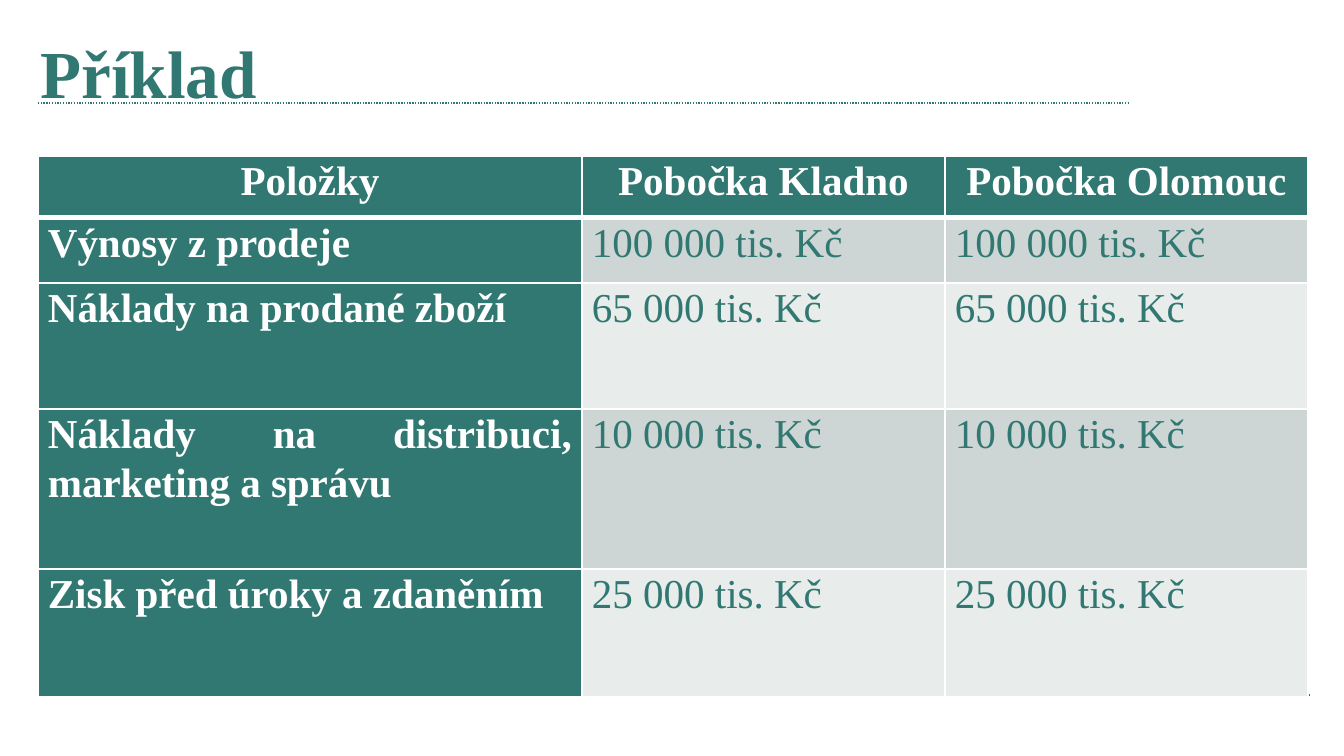
from lxml.etree import SubElement
from pptx import Presentation
from pptx.dml.color import RGBColor
from pptx.enum.dml import MSO_LINE_DASH_STYLE as Dash
from pptx.enum.shapes import MSO_CONNECTOR as Conn
from pptx.enum.text import MSO_ANCHOR as Anchor, PP_ALIGN as Align
from pptx.oxml.ns import qn
from pptx.util import Pt

FONT = "Times New Roman"
TEAL, WHITE, BANDS = "307871", "FFFFFF", ("CDD6D5", "E8ECEB")
COLS = (544, 363, 363)
ROWS = (62, 65, 126, 160, 128)
HEADERS = ("Položky", "Pobočka Kladno", "Pobočka Olomouc")
ITEMS = (
    ("Výnosy z prodeje", "100 000 tis. Kč"),
    ("Náklady na prodané zboží", "65 000 tis. Kč"),
    ("Náklady na distribuci, marketing a správu", "10 000 tis. Kč"),
    ("Zisk před úroky a zdaněním", "25 000 tis. Kč"),
)


def px(n):
    """Turn pixels into EMU."""
    return round(n * 914400 / 134.4)


def color(hex_code):
    """Turn a hex string into a colour."""
    return RGBColor.from_string(hex_code)


def style(p, size, hex_code, bold, align):
    """Format a whole paragraph."""
    p.alignment = align
    p.font.name, p.font.size, p.font.bold = FONT, Pt(size), bold
    p.font.color.rgb = color(hex_code)


def add_rule(s, x, y, w):
    """Draw a dotted horizontal rule."""
    line = s.shapes.add_connector(Conn.STRAIGHT, px(x), px(y), px(x + w), px(y))
    line.line.color.rgb = color(TEAL)
    line.line.width = Pt(0.75)
    line.line.dash_style = Dash.ROUND_DOT
    SubElement(line._element.spPr, qn("a:effectLst"))


def add_title(s, x, y, w, h, text):
    """Place the slide title."""
    sp = s.shapes.title
    sp.left, sp.top, sp.width, sp.height = px(x), px(y), px(w), px(h)
    tf = sp.text_frame
    tf.text = text
    tf.vertical_anchor = Anchor.MIDDLE
    style(tf.paragraphs[0], 36, TEAL, True, Align.LEFT)


def add_borders(cell, **widths):
    """Give a cell white borders of the given point widths."""
    tcPr = cell._tc.get_or_add_tcPr()
    for side in "LRTB":
        ln = SubElement(tcPr, qn(f"a:ln{side}"), w=str(Pt(widths.get(side, 1))))
        SubElement(SubElement(ln, qn("a:solidFill")), qn("a:srgbClr"), val=WHITE)


def fill_cell(cell, text, row, col):
    """Write and format one table cell."""
    head = row == 0
    dark = head or col == 0
    cell.margin_left = cell.margin_right = px(10)
    cell.margin_top = cell.margin_bottom = 0
    add_borders(cell, T=3 if row == 1 else 1, B=3 if head else 1)
    cell.fill.solid()
    cell.fill.fore_color.rgb = color(TEAL if dark else BANDS[(row - 1) % 2])
    cell.text = text
    p = cell.text_frame.paragraphs[0]
    p.line_spacing = 1.07
    style(p, 22, WHITE if dark else TEAL, dark, Align.CENTER if head else Align.JUSTIFY)


def add_results(s, x, y):
    """Build the table comparing both branches."""
    frame = s.shapes.add_table(len(ROWS), len(COLS), px(x), px(y), px(sum(COLS)), px(sum(ROWS)))
    table = frame.table
    for column, w in zip(table.columns, COLS):
        column.width = px(w)
    for row, h in zip(table.rows, ROWS):
        row.height = px(h)
    lines = [HEADERS] + [(name, value, value) for name, value in ITEMS]
    for i, line in enumerate(lines):
        for j, text in enumerate(line):
            fill_cell(table.cell(i, j), text, i, j)


def main():
    """Build and save the slide."""
    prs = Presentation()
    prs.slide_width, prs.slide_height = px(1344), px(756)
    s = prs.slides.add_slide(prs.slide_layouts[5])
    add_rule(s, 38, 103, 1090)
    add_rule(s, 38, 695, 1272)
    add_title(s, 27, 19, 1185, 106, "Příklad")
    add_results(s, 38, 156)
    prs.save("out.pptx")


if __name__ == "__main__":
    main()
